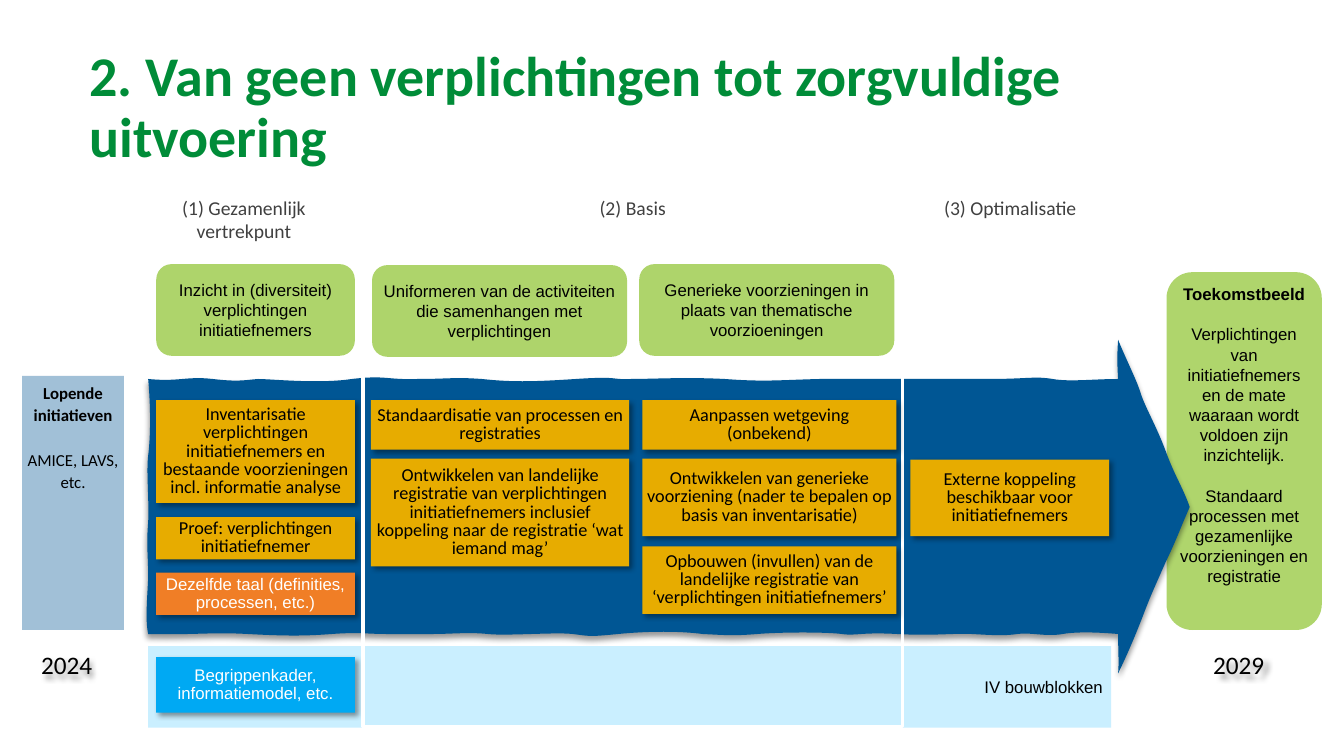
import pptx
import pptx.dml.color
import pptx.enum.shapes
import pptx.enum.text
import pptx.oxml
import pptx.oxml.ns
import pptx.util
from pptx.util import Inches

SHAPES = pptx.enum.shapes.MSO_SHAPE
ALIGN = pptx.enum.text.PP_ALIGN
ANCHOR = pptx.enum.text.MSO_ANCHOR
Pt = pptx.util.Pt
qn = pptx.oxml.ns.qn
A_NS = pptx.oxml.ns.nsdecls("a")

BLUE, GREEN, LIME, OCHRE = "005694", "008C38", "96C83F", "E7AC00"
ORANGE, SKY, PALE = "F07E26", "00A9F3", "CAEFFF"
BLACK, WHITE, GREY = "000000", "FFFFFF", "404040"

# Offsets in inches from the arrow's corner: two control points and an end point per curve
ARROW_START = (0, .39)
ARROW_CURVES = [
    (.31, .42, .38, .36, .64, .39), (.90, .42, .96, .40, 1.09, .39),
    (1.22, .39, 1.69, .44, 2.02, .39), (2.36, .35, 2.36, .40, 2.67, .39),
    (2.98, .39, 3.03, .37, 3.31, .39), (3.59, .42, 3.79, .42, 4.24, .39),
    (4.69, .36, 4.58, .40, 4.79, .39), (5.01, .39, 5.33, .37, 5.72, .39),
    (6.12, .42, 6.26, .40, 6.66, .39), (7.05, .39, 7.04, .39, 7.40, .39),
    (7.75, .39, 7.94, .39, 8.33, .39), (8.72, .39, 8.80, .36, 8.97, .39),
    (9.14, .42, 9.38, .39, 9.62, .39), (9.61, .22, 9.61, .16, 9.62, 0),
    (9.70, .20, 9.81, .41, 9.85, .55), (9.90, .69, 10, .86, 10.09, 1.10),
    (10.18, 1.35, 10.26, 1.46, 10.33, 1.66), (10.22, 1.91, 10.21, 1.96, 10.09, 2.21),
    (9.98, 2.46, 9.95, 2.52, 9.87, 2.73), (9.79, 2.94, 9.69, 3.17, 9.62, 3.31),
    (9.63, 3.21, 9.62, 3.07, 9.62, 2.92), (9.51, 2.91, 9.24, 2.89, 9.07, 2.92),
    (8.90, 2.95, 8.75, 2.90, 8.62, 2.92), (8.49, 2.94, 8.35, 2.93, 8.17, 2.92),
    (7.99, 2.91, 7.79, 2.94, 7.43, 2.92), (7.06, 2.90, 7.03, 2.94, 6.88, 2.92),
    (6.73, 2.90, 6.28, 2.90, 6.04, 2.92), (5.80, 2.94, 5.71, 2.93, 5.50, 2.92),
    (5.28, 2.89, 4.96, 2.89, 4.66, 2.92), (4.36, 2.95, 4.38, 2.94, 4.21, 2.92),
    (4.04, 2.90, 3.56, 2.94, 3.37, 2.92), (3.18, 2.90, 3, 2.92, 2.82, 2.92),
    (2.65, 2.92, 2.57, 2.92, 2.37, 2.92), (2.17, 2.92, 2.09, 2.90, 1.82, 2.92),
    (1.56, 2.94, 1.36, 2.94, .99, 2.92), (.62, 2.90, .49, 2.93, 0, 2.92),
    (-.03, 2.78, -.01, 2.58, 0, 2.36), (0, 2.14, -.02, 2.04, 0, 1.81),
    (.01, 1.58, -.02, 1.31, 0, 1.15), (.02, .99, .03, .73, 0, .39),
]


def rgb(colour):
    return pptx.dml.color.RGBColor.from_string(colour)


def set_all(target, values):
    for key, value in values.items():
        setattr(target, key, value)


def paint(shape, fill=None, opacity=None, line=None, shadow_angle=None):
    shape.shadow.inherit = False
    if fill:
        shape.fill.solid()
        shape.fill.fore_color.rgb = rgb(fill)
        if opacity:
            shape.fill._xPr.find(".//" + qn("a:srgbClr")).append(
                pptx.oxml.parse_xml(f'<a:alpha {A_NS} val="{opacity * 1000}"/>'))
    else:
        shape.fill.background()
    if line:
        shape.line.color.rgb = rgb(line)
        shape.line.width = Pt(2.25)
    else:
        shape.line.fill.background()
    if shadow_angle is not None:
        shape._element.spPr.find(qn("a:effectLst")).append(pptx.oxml.parse_xml(
            f'<a:outerShdw {A_NS} blurRad="{Pt(4)}" dist="{Pt(3)}"'
            f' dir="{shadow_angle * 60000}" algn="tl" rotWithShape="0">'
            '<a:srgbClr val="000000"><a:alpha val="40000"/></a:srgbClr></a:outerShdw>'))


def write(shape, paragraphs, size=12, font="Arial", colour=BLACK, align=ALIGN.CENTER,
          anchor=ANCHOR.MIDDLE, inset=(.04, .04), spacing=None, gap=0, bold_first=False):
    frame = shape.text_frame
    across, down = map(Inches, inset)
    set_all(frame, {"word_wrap": True, "vertical_anchor": anchor, "margin_left": across,
                    "margin_right": across, "margin_top": down, "margin_bottom": down})
    for index, words in enumerate(paragraphs):
        paragraph = frame.add_paragraph() if index else frame.paragraphs[0]
        paragraph.text = words
        set_all(paragraph, {"alignment": align, "line_spacing": spacing})
        if index:
            paragraph.space_before = Pt(gap)
        set_all(paragraph.font, {"size": Pt(size), "name": font,
                                 "bold": bold_first and index == 0})
        paragraph.font.color.rgb = rgb(colour)


def panel(slide, box, paragraphs, look, kind=SHAPES.RECTANGLE, **text):
    shape = slide.shapes.add_shape(kind, *map(Inches, box))
    paint(shape, **look)
    write(shape, paragraphs, **text)


def label(slide, box, words, **text):
    write(slide.shapes.add_textbox(*map(Inches, box)), [words], font="Calibri",
          inset=(.1, .05), **text)


def years(slide, box, first, last):
    """First year at the left, last year on a right tab."""
    timeline = slide.shapes.add_shape(SHAPES.RECTANGLE, *map(Inches, box))
    paint(timeline, shadow_angle=45)
    timeline.text_frame.paragraphs[0]._p.get_or_add_pPr().append(pptx.oxml.parse_xml(
        f'<a:tabLst {A_NS}><a:tab pos="{Inches(box[2] - .6)}" algn="r"/></a:tabLst>'))
    write(timeline, [f"{first}\t{last}"], size=18, font="Calibri", align=ALIGN.LEFT,
          anchor=ANCHOR.BOTTOM, inset=(.1, .05))


def arrow(slide, left, top):
    """Wavy arrow: straight segments between the end points, then bent into curves."""
    def place(x, y):
        return Inches(left + x), Inches(top + y)

    builder = slide.shapes.build_freeform(*place(*ARROW_START), scale=1.0)
    builder.add_line_segments([place(*curve[4:]) for curve in ARROW_CURVES], close=True)
    shape = builder.convert_to_shape()
    segments = list(shape._element.iter(qn("a:lnTo")))
    for segment, curve in zip(segments, ARROW_CURVES):
        points = "".join(f'<a:pt x="{Inches(x)}" y="{Inches(y)}"/>'
                         for x, y in zip(curve[::2], curve[1::2]))
        segment.getparent().replace(segment, pptx.oxml.parse_xml(
            f"<a:cubicBezTo {A_NS}>{points}</a:cubicBezTo>"))
    paint(shape, BLUE, shadow_angle=90)


def task(slide, box, words, fill=OCHRE, inset=.04):
    text = {"size": 13, "font": "Calibri"} if fill == OCHRE else {"colour": WHITE}
    panel(slide, box, [words], {"fill": fill, "shadow_angle": 45}, spacing=Pt(13),
          inset=(inset, .04), **text)


def building_blocks(slide, box, caption, block):
    left, top, _, height = box
    panel(slide, box, [caption], {"fill": PALE}, align=ALIGN.RIGHT, inset=(.08, .04))
    task(slide, (left + .08, top + .11, 1.97, height - .26), block, SKY)


def phase(slide, box, heading, columns, line=None):
    """Heading at the top; each column is (offset, width, goal, tasks)."""
    left, top, _, _ = box
    text = {"size": 14, "colour": GREY, "anchor": ANCHOR.TOP}
    if line:
        panel(slide, box, [heading], {"line": line}, font="Calibri", inset=(.1, .05), **text)
    else:
        label(slide, box, heading, **text)
    for offset, width, goal, tasks in columns:
        if goal:
            goal_offset, goal_down, goal_width, words = goal
            panel(slide, (left + goal_offset, top + goal_down, goal_width, .91), [words],
                  {"fill": LIME, "opacity": 77}, SHAPES.ROUNDED_RECTANGLE)
        for down, height, *content in tasks:
            task(slide, (left + offset, top + down, width, height), *content)


def main():
    deck = pptx.Presentation()
    set_all(deck, {"slide_width": Inches(13.33), "slide_height": Inches(7.5)})
    slide = deck.slides.add_slide(deck.slide_layouts[6])
    years(slide, (.31, 6.42, 12.73, .37), "2024", "2029")
    panel(slide, (11.57, 2.7, 1.54, 3.55), [
        "Toekomstbeeld",
        "Verplichtingen van initiatiefnemers en de mate waaraan wordt voldoen zijn inzichtelijk.",
        "Standaard processen met gezamenlijke voorzieningen en registratie",
    ], {"fill": LIME, "opacity": 76}, SHAPES.ROUNDED_RECTANGLE, anchor=ANCHOR.TOP,
        gap=14.4, bold_first=True)
    building_blocks(slide, (1.47, 6.41, 9.55, .81), "IV bouwblokken",
                    "Begrippenkader, informatiemodel, etc.")
    arrow(slide, 1.47, 3.37)
    panel(slide, (.22, 3.73, 1.01, 2.52), ["Lopende initiatieven", "AMICE, LAVS, etc."],
          {"fill": BLUE, "opacity": 37}, font="Calibri", anchor=ANCHOR.TOP,
          spacing=Pt(16), gap=16, bold_first=True)
    label(slide, (.79, .39, 10.43, 1.38), "2. Van geen verplichtingen tot zorgvuldige uitvoering",
          size=40, colour=GREEN, align=ALIGN.LEFT, spacing=.9, bold_first=True)
    phase(slide, (1.37, 1.89, 2.1, 5.32), "(1) Gezamenlijk vertrekpunt", [
        (.18, 1.97, (.18, .73, 1.97, "Inzicht in (diversiteit) verplichtingen initiatiefnemers"), [
            (2.08, 1.02, "Inventarisatie verplichtingen initiatiefnemers en bestaande "
                         "voorzieningen incl. informatie analyse"),
            (3.24, .42, "Proef: verplichtingen initiatiefnemer", OCHRE, 0),
            (3.79, .42, "Dezelfde taal (definities, processen, etc.)", ORANGE)])])
    phase(slide, (3.6, 1.89, 5.35, 5.32), "(2) Basis", [
        (.08, 2.56, (.09, .74, 2.53, "Uniformeren van de activiteiten die samenhangen "
                                     "met verplichtingen"), [
            (2.08, .49, "Standaardisatie van processen en registraties"),
            (2.66, 1.07, "Ontwikkelen van landelijke registratie van verplichtingen "
                         "initiatiefnemers inclusief koppeling naar de registratie "
                         "‘wat iemand mag’")]),
        (2.77, 2.52, (2.74, .73, 2.53, "Generieke voorzieningen in plaats van thematische "
                                       "voorzioeningen"), [
            (2.08, .49, "Aanpassen wetgeving (onbekend)"),
            (2.66, .77, "Ontwikkelen van generieke voorziening (nader te bepalen op "
                        "basis van inventarisatie)"),
            (3.53, .67, "Opbouwen (invullen) van de landelijke registratie van "
                        "‘verplichtingen initiatiefnemers’")])], WHITE)
    phase(slide, (8.97, 1.89, 2.1, 5.32), "(3) Optimalisatie", [
        (.06, 1.97, None, [
            (2.67, .76, "Externe koppeling beschikbaar voor initiatiefnemers")])])
    deck.save("out.pptx")


if __name__ == "__main__":
    main()
